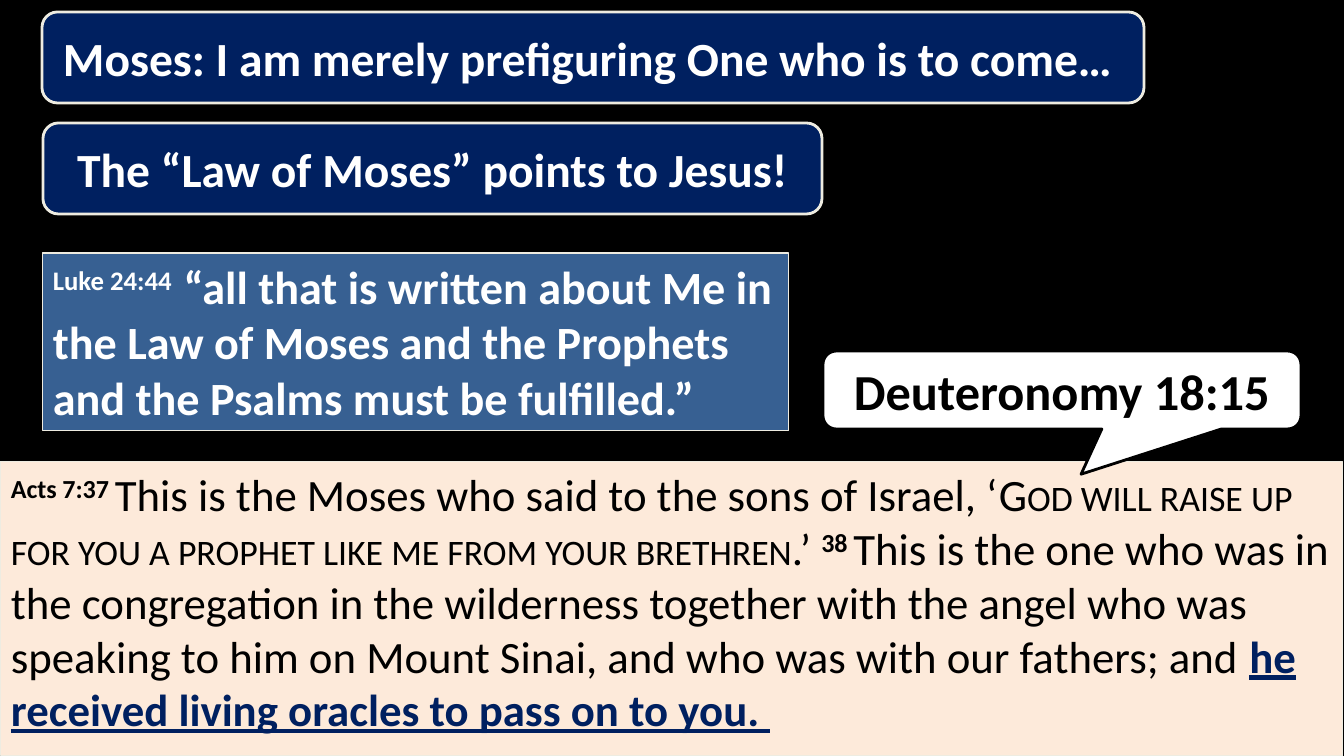
from pptx import Presentation
from pptx.dml.color import RGBColor
from pptx.enum.shapes import MSO_SHAPE
from pptx.enum.text import MSO_ANCHOR, MSO_AUTO_SIZE, PP_ALIGN
from pptx.util import Pt

PX = 12192000 / 1344
SLIDE_SIZE = (1344, 756)
BACKGROUND = "000000"
CREAM, NAVY, WHITE, BLACK = "EEECE1", "002060", "FFFFFF", "000000"

RAISED = {"baseline": "30000"}
SMALL_CAPS = {"cap": "small"}
BOLD = {"bold": True}
PLAIN = {"bold": False}
ORACLES = {"bold": True, "underline": True}

ACTS = [
    ("Acts 7:37 ", BOLD, RAISED, BLACK),
    ("This is the Moses who said to the sons of Israel, ‘", PLAIN, {}, BLACK),
    ("God will raise up for you a prophet like me from your brethren", PLAIN, SMALL_CAPS, BLACK),
    (".’ ", PLAIN, {}, BLACK),
    ("38 ", BOLD, RAISED, BLACK),
    ("This is the one who was in the congregation in the wilderness together with the angel who was "
     "speaking to him on Mount Sinai, and who was with our fathers; and ", PLAIN, {}, BLACK),
    ("he received living oracles to pass on to you. ", ORACLES, {}, NAVY),
]
MOSES = [("Moses: I am merely prefiguring One who is to come… ", BOLD, {}, WHITE)]
LAW = [("The “Law of Moses” points to Jesus!", BOLD, {}, WHITE)]
DEUTERONOMY = [("Deuteronomy 18:15", BOLD, {}, BLACK)]
LUKE = [
    ("Luke 24:44  ", BOLD, RAISED, WHITE),
    ("“all that is written about Me in the Law of Moses and the Prophets "
     "and the Psalms must be fulfilled.”", BOLD, {}, WHITE),
]

HEADING_TAIL = (-0.22, 0.5, 0.17)
REFERENCE_TAIL = (0.04, 1.08, 0.17)

PANELS = [
    {"at": (1, 462, 1342, 294), "fill": "FDEADA", "line": CREAM, "size": 32, "spans": ACTS},
    {"at": (42, 12, 1102, 91), "fill": NAVY, "line": CREAM, "size": 34, "spans": MOSES,
     "tail": HEADING_TAIL},
    {"at": (43, 123, 779, 91), "fill": NAVY, "line": CREAM, "size": 34, "spans": LAW,
     "tail": HEADING_TAIL},
    {"at": (823, 351, 478, 78), "fill": WHITE, "line": BLACK, "size": 36, "spans": DEUTERONOMY,
     "tail": REFERENCE_TAIL},
    {"at": (43, 253, 746, 178), "fill": "376092", "line": CREAM, "size": 33, "spans": LUKE,
     "grow": True},
]


def emu(px):
    return round(px * PX)


def paint(fill, color):
    fill.solid()
    fill.fore_color.rgb = RGBColor.from_string(color)


def set_all(target, values):
    for name, value in values.items():
        setattr(target, name, value)


def add_spans(para, spans, size):
    for text, style, marks, color in spans:
        span = para.add_run()
        span.text = text
        set_all(span.font, {"name": "Calibri", "size": Pt(size), **style})
        paint(span.font.fill, color)
        properties = span._r.get_or_add_rPr()
        for name, value in marks.items():
            properties.set(name, value)


def add_panel(page, panel):
    tail = panel.get("tail")
    kind = MSO_SHAPE.ROUNDED_RECTANGULAR_CALLOUT if tail else MSO_SHAPE.RECTANGLE
    box = page.shapes.add_shape(kind, *map(emu, panel["at"]))
    box.shadow.inherit = False
    for index, value in enumerate(tail or ()):
        box.adjustments[index] = value
    paint(box.fill, panel["fill"])
    paint(box.line.fill, panel["line"])
    box.line.width = Pt(2 if tail else 0.75)
    set_all(box.text_frame, {
        "word_wrap": True,
        "vertical_anchor": MSO_ANCHOR.MIDDLE if tail else MSO_ANCHOR.TOP,
        "auto_size": MSO_AUTO_SIZE.SHAPE_TO_FIT_TEXT if panel.get("grow") else MSO_AUTO_SIZE.NONE,
    })
    para = box.text_frame.paragraphs[0]
    para.alignment = PP_ALIGN.CENTER if tail else PP_ALIGN.LEFT
    add_spans(para, panel["spans"], panel["size"])


def main():
    deck = Presentation()
    deck.slide_width, deck.slide_height = map(emu, SLIDE_SIZE)
    page = deck.slides.add_slide(deck.slide_layouts[6])
    paint(page.background.fill, BACKGROUND)
    for panel in PANELS:
        add_panel(page, panel)
    deck.save("out.pptx")


if __name__ == "__main__":
    main()
